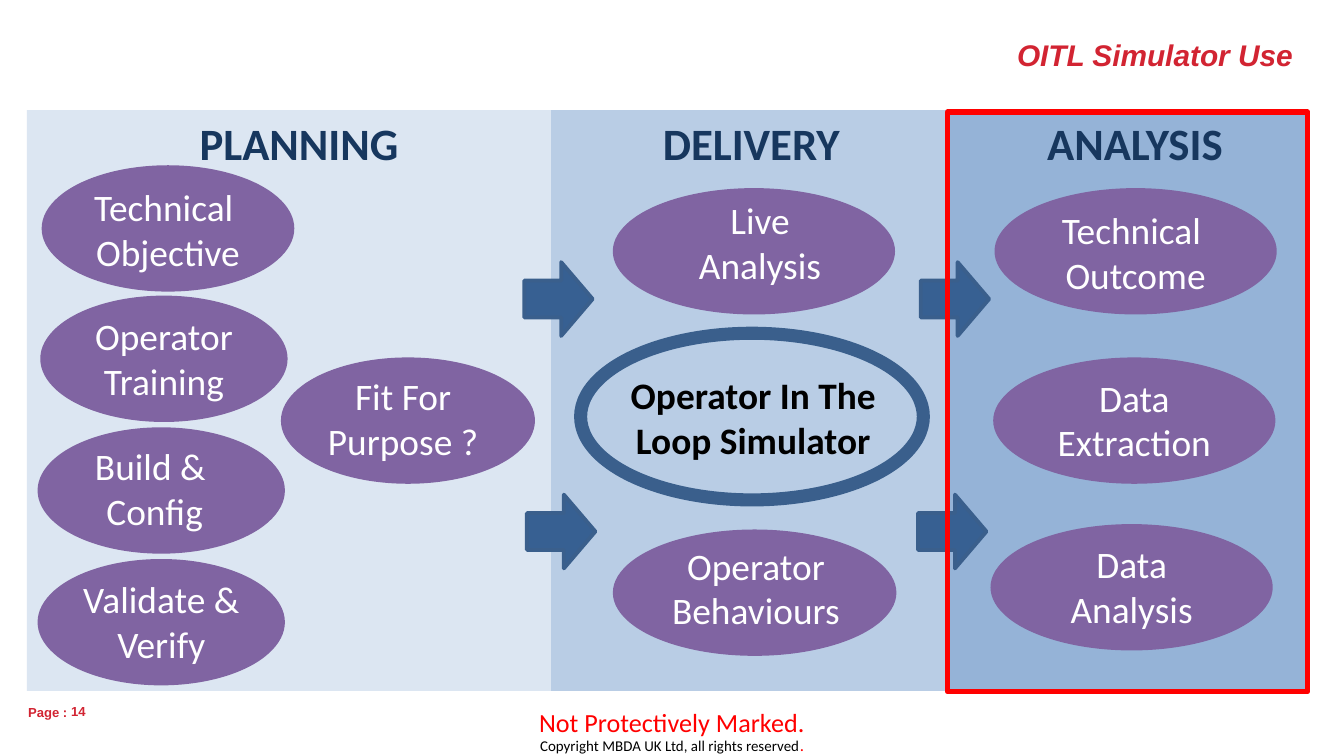
from pptx import Presentation
from pptx.dml.color import RGBColor
from pptx.enum.shapes import MSO_SHAPE
from pptx.enum.text import MSO_ANCHOR, PP_ALIGN
from pptx.util import Inches, Pt

RECT, OVAL, ARROW = MSO_SHAPE.RECTANGLE, MSO_SHAPE.OVAL, MSO_SHAPE.RIGHT_ARROW
LEFT, CENTER, RIGHT = PP_ALIGN.LEFT, PP_ALIGN.CENTER, PP_ALIGN.RIGHT
MIDDLE, TOP = MSO_ANCHOR.MIDDLE, MSO_ANCHOR.TOP

SLIDE_WIDTH = Inches(10)
SLIDE_HEIGHT = SLIDE_WIDTH * 9 // 16
COLUMN, ROW = SLIDE_WIDTH / 100, SLIDE_HEIGHT / 56.25
COLORS = {
    "planning": "DCE6F2", "delivery": "B9CDE5", "analysis": "95B3D7",
    "step": "8064A2", "arrow": "376092", "outline": "3A5F8C",
    "heading": "17375E", "brand": "D22432", "alert": "FF0000",
    "white": "FFFFFF", "black": "000000",
}
PHASES = [
    ("delivery", (41, 8.2, 29.9, 43.2), "DELIVERY", (41.3, 8.15, 29.2, 5)),
    ("planning", (2, 8.2, 39, 43.2), "PLANNING", (2, 8.1, 40.5, 5)),
    ("analysis", (70.5, 8.2, 26.8, 43.2), "ANALYSIS", (71.7, 8.1, 25.5, 5)),
]
STEP_HEIGHT, LABEL_HEIGHT = 9.4, 7.7
STEPS = [
    ((3.1, 12.3, 18.8), 13.9, (0, 0.9), "Technical \nObjective"),
    ((3, 22, 18.4), 16.9, (0, 0.8), "Operator Training"),
    ((2.8, 31.8, 18.4), 17.2, (-0.5, 0.7), "Build & \nConfig"),
    ((2.8, 41.6, 18.4), 16.9, (0, 0.8), "Validate & Verify"),
    ((20.9, 26.6, 18.9), 13.8, (-0.35, 0.7), "Fit For Purpose ?"),
    ((45.6, 14, 21), 13.5, (0.45, 0.2), "Live Analysis"),
    ((45.6, 39.4, 21.1), 16.1, (0.1, 0.5), "Operator Behaviours"),
    ((74, 14, 21), 13.6, (0, 0.9), "Technical \nOutcome"),
    ((73.9, 26.6, 21), 16.1, (0, 0.8), "Data\nExtraction"),
    ((73.7, 39, 21), 16.1, (0, 0.8), "Data\nAnalysis"),
]
ARROWS = [(39, 19.5), (39.2, 36.8), (68.5, 19.5), (68.3, 36.8)]


def color(name):
    """Return the named palette colour."""
    return RGBColor.from_string(COLORS[name])


def place(left, top, width, height):
    """Turn grid columns and rows into slide lengths."""
    return [round(n * unit) for n, unit in
            zip((left, top, width, height), (COLUMN, ROW, COLUMN, ROW))]


def style(font, size, ink, bold=False, face="Calibri"):
    """Set a font's face, size, colour and weight."""
    font.name, font.size, font.bold = face, Pt(size), bold
    font.color.rgb = color(ink)


def write(frame, text, size, ink, bold=False, face="Calibri", align=CENTER):
    """Fill a text frame and format each of its paragraphs."""
    frame.text = text
    for paragraph in frame.paragraphs:
        paragraph.alignment = align
        for run in paragraph.runs:
            style(run.font, size, ink, bold, face)


def add_label(shapes, area, text, size, ink, bold=False):
    """Add a wrapped, centred label and return its frame."""
    frame = shapes.add_textbox(*place(*area)).text_frame
    frame.word_wrap = True
    write(frame, text, size, ink, bold)
    return frame


def add_page_mark(shapes, area, text, anchor):
    """Add a small page mark without margins."""
    frame = shapes.add_textbox(*place(*area)).text_frame
    frame.margin_left = frame.margin_right = 0
    frame.margin_top = frame.margin_bottom = 0
    frame.word_wrap, frame.vertical_anchor = False, anchor
    write(frame, text, 7, "brand", True, "Arial", LEFT)


def add_figure(shapes, kind, area, fill=None, outline=None, weight=0):
    """Add a preset shape with an optional fill and outline."""
    figure = shapes.add_shape(kind, *place(*area))
    figure.shadow.inherit = False
    if fill:
        figure.fill.solid()
        figure.fill.fore_color.rgb = color(fill)
    else:
        figure.fill.background()
    if outline:
        figure.line.color.rgb = color(outline)
        figure.line.width = Pt(weight)
    else:
        figure.line.fill.background()
    return figure


def add_step(slide, oval, label_width, shift, text):
    """Group an oval with a label set off from its centre."""
    left, top, width = oval
    step = slide.shapes.add_group_shape().shapes
    add_figure(step, OVAL, (left, top, width, STEP_HEIGHT), "step")
    label_left = left + (width - label_width) / 2 + shift[0]
    add_label(step, (label_left, top + shift[1], label_width, LABEL_HEIGHT),
              text, 20, "white")


def add_simulator(slide):
    """Group the central ring with its label."""
    simulator = slide.shapes.add_group_shape().shapes
    add_figure(simulator, OVAL, (43.2, 24.8, 25.5, 12.4), None, "outline", 7)
    add_label(simulator, (45.4, 27.2, 21.3, LABEL_HEIGHT),
              "Operator In The Loop Simulator", 20, "black", True)


def add_arrow(slide, left, top):
    """Add a block arrow between two phases."""
    arrow = add_figure(slide.shapes, ARROW, (left, top, 5.1, 5.5),
                       "arrow", "outline", 2)
    arrow.adjustments[0], arrow.adjustments[1] = 0.5, 0.46


def add_title(slide, text):
    """Place and format the slide title."""
    title = slide.shapes.title
    title.left, title.top, title.width, title.height = place(14, 0.9, 83.2, 6.3)
    title.text_frame.vertical_anchor = MIDDLE
    write(title.text_frame, text, 16, "brand", True, "Arial", RIGHT)
    title.text_frame.paragraphs[0].runs[0].font.italic = True


def add_footer(slide):
    """Add the marking, the copyright line and the page number."""
    add_label(slide.shapes, (0, 52.1, 100, 3.4),
              "Not Protectively Marked.", 14, "alert")
    rights = add_label(slide.shapes, (0.4, 54.2, 99.2, 2.5),
                       "Copyright MBDA UK Ltd, all rights reserved", 8, "black")
    stop = rights.paragraphs[0].add_run()
    stop.text = "."
    style(stop.font, 9, "alert")
    add_page_mark(slide.shapes, (2.1, 52.4, 2.9, 1.2), "Page :", TOP)
    add_page_mark(slide.shapes, (5.3, 52, 2, 1.9), "14", MIDDLE)


def main():
    """Build and save the slide."""
    deck = Presentation()
    deck.slide_width, deck.slide_height = SLIDE_WIDTH, SLIDE_HEIGHT
    slide = deck.slides.add_slide(deck.slide_layouts[5])
    add_title(slide, "OITL Simulator Use")
    add_footer(slide)
    for fill, panel, _, _ in PHASES:
        add_figure(slide.shapes, RECT, panel, fill)
    for _, _, heading, area in PHASES:
        add_label(slide.shapes, area, heading, 24, "heading", True)
    add_simulator(slide)
    for step in STEPS:
        add_step(slide, *step)
    for arrow in ARROWS:
        add_arrow(slide, *arrow)
    add_figure(slide.shapes, RECT, (70.5, 8.35, 26.8, 43.1), None, "alert", 3)
    deck.save("out.pptx")


if __name__ == "__main__":
    main()
